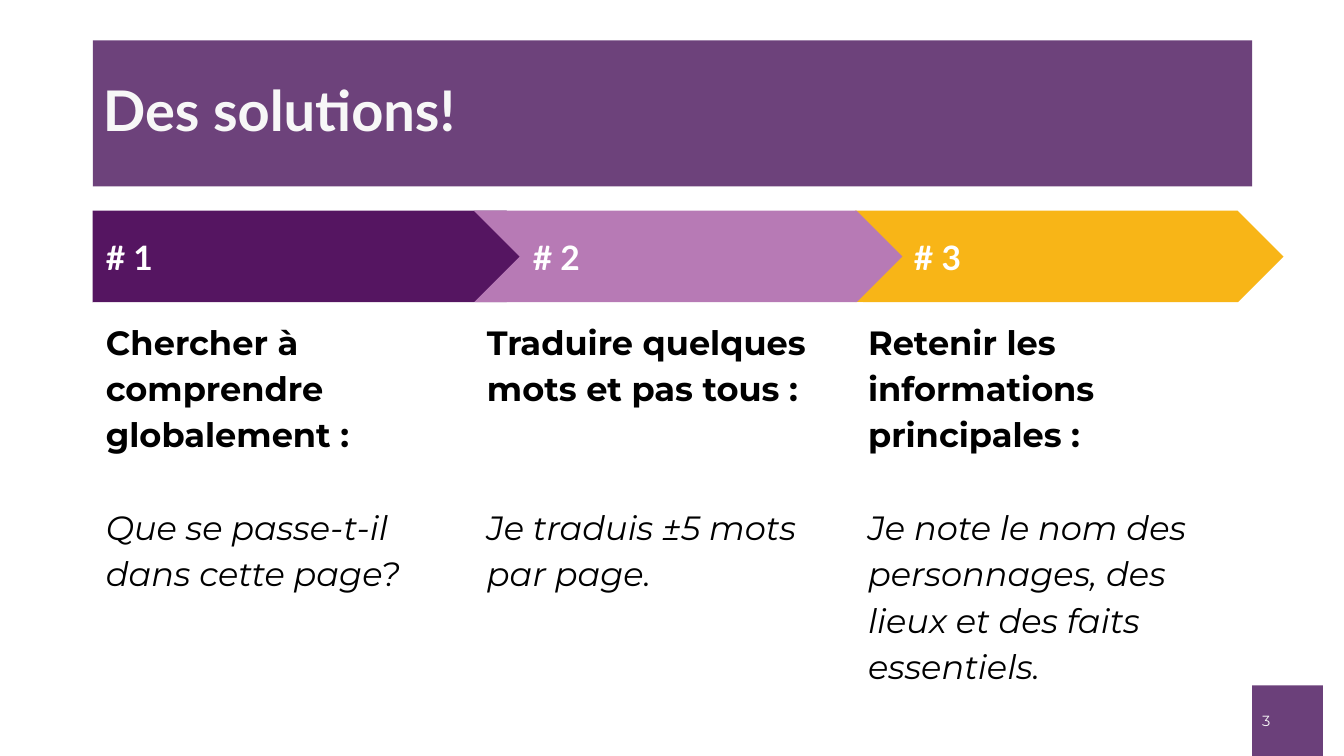
import pptx
import pptx.dml.color
import pptx.enum.shapes
import pptx.enum.text
import pptx.util
from lxml import etree
from pptx.oxml.ns import qn

Inches = pptx.util.Inches
Pt = pptx.util.Pt
Shapes = pptx.enum.shapes.MSO_SHAPE
Anchor = pptx.enum.text.MSO_ANCHOR

COLORS = {
    "banner": "5B2B6B",
    "page": "6B407A",
    "plum": "551561",
    "mauve": "B77AB5",
    "gold": "F8B517",
    "light": "F7F7F7",
    "white": "FFFFFF",
    "black": "000000",
}
HEADING_FONT = "Lato"
BODY_FONT = "Montserrat"

LEFT = 0.92
STEP = 3.78
ARROW_TOP = 2.09
ARROW_HEIGHT = 0.91
DETAIL_TOP = 3
DETAIL_HEIGHT = 3.81
INSET = 0.13
BLANK_LINE = 33


class SolutionsSlide:
    def __init__(self, deck):
        self.slide = deck.slides.add_slide(deck.slide_layouts[5])

    def color(self, name):
        return pptx.dml.color.RGBColor.from_string(COLORS[name])

    def fill(self, shape, name):
        shape.fill.solid()
        shape.fill.fore_color.rgb = self.color(name)

    def frame(self, shape, anchor, side, top):
        text = shape.text_frame
        text.word_wrap = True
        text.auto_size = pptx.enum.text.MSO_AUTO_SIZE.NONE
        text.vertical_anchor = anchor
        text.margin_left = text.margin_right = Inches(side)
        text.margin_top = text.margin_bottom = Inches(top)
        return text

    def add_words(self, paragraph, words, font, size, color, bold=False, italic=False, spacing=1.0):
        paragraph.alignment = pptx.enum.text.PP_ALIGN.LEFT
        paragraph.line_spacing = spacing
        run = paragraph.add_run()
        run.text = words
        run.font.name = font
        run.font.size = Pt(size)
        run.font.bold = bold
        run.font.italic = italic
        run.font.color.rgb = self.color(color)

    def block(self, kind, left, top, width, height, fill):
        shape = self.slide.shapes.add_shape(
            kind, Inches(left), Inches(top), Inches(width), Inches(height))
        shape.shadow.inherit = False
        self.fill(shape, fill)
        shape.line.fill.background()
        return shape

    def title(self, words):
        banner = self.slide.shapes.title
        banner.left, banner.top = Inches(LEFT), Inches(0.4)
        banner.width, banner.height = Inches(11.5), Inches(1.45)
        self.fill(banner, "banner")
        tint = next(banner.element.iter(qn("a:srgbClr")))
        etree.SubElement(tint, qn("a:alpha"), val="89000")
        text = self.frame(banner, Anchor.MIDDLE, 0.1, 0.05)
        self.add_words(text.paragraphs[0], words, HEADING_FONT, 40, "light", bold=True, spacing=0.9)

    def page_number(self, number):
        badge = self.block(Shapes.RECTANGLE, 12.42, 6.8, 0.7, 0.7, "page")
        text = self.frame(badge, Anchor.MIDDLE, 0.1, 0.05)
        self.add_words(text.paragraphs[0], number, BODY_FONT, 10.5, "light")

    def arrow(self, kind, left, width, fill, label):
        step = self.block(kind, left, ARROW_TOP, width, ARROW_HEIGHT, fill)
        text = self.frame(step, Anchor.MIDDLE, INSET, INSET)
        self.add_words(text.paragraphs[0], label, HEADING_FONT, 24, "white", bold=True)

    def detail(self, left, width, advice, example, blank_lines):
        panel = self.block(Shapes.RECTANGLE, left, DETAIL_TOP, width, DETAIL_HEIGHT, "white")
        text = self.frame(panel, Anchor.TOP, INSET, INSET)
        self.add_words(text.paragraphs[0], advice, BODY_FONT, 24, "black", bold=True, spacing=1.15)
        illustration = text.add_paragraph()
        illustration.space_before = Pt(BLANK_LINE * blank_lines)
        self.add_words(illustration, example, BODY_FONT, 24, "black", italic=True, spacing=1.15)


def main():
    deck = pptx.Presentation()
    deck.slide_width, deck.slide_height = Inches(13.33), Inches(7.5)
    page = SolutionsSlide(deck)
    page.title("Des solutions!")
    page.page_number("3")

    solutions = [
        (3, Shapes.CHEVRON, 4.25, 3.86, "gold", "Retenir les informations principales :",
         "Je note le nom des personnages, des lieux et des faits essentiels.", 1),
        (1, Shapes.PENTAGON, 4.56, 3.79, "plum", "Chercher à comprendre globalement :",
         "Que se passe-t-il dans cette page?", 1),
        (2, Shapes.CHEVRON, 4.25, 3.86, "mauve", "Traduire quelques mots et pas tous :",
         "Je traduis ±5 mots par page.", 2),
    ]
    for rank, kind, arrow_width, panel_width, fill, advice, example, blank_lines in solutions:
        left = LEFT + STEP * (rank - 1)
        page.arrow(kind, left, arrow_width, fill, f"# {rank}")
        page.detail(left, panel_width, advice, example, blank_lines)

    deck.save("out.pptx")


if __name__ == "__main__":
    main()
